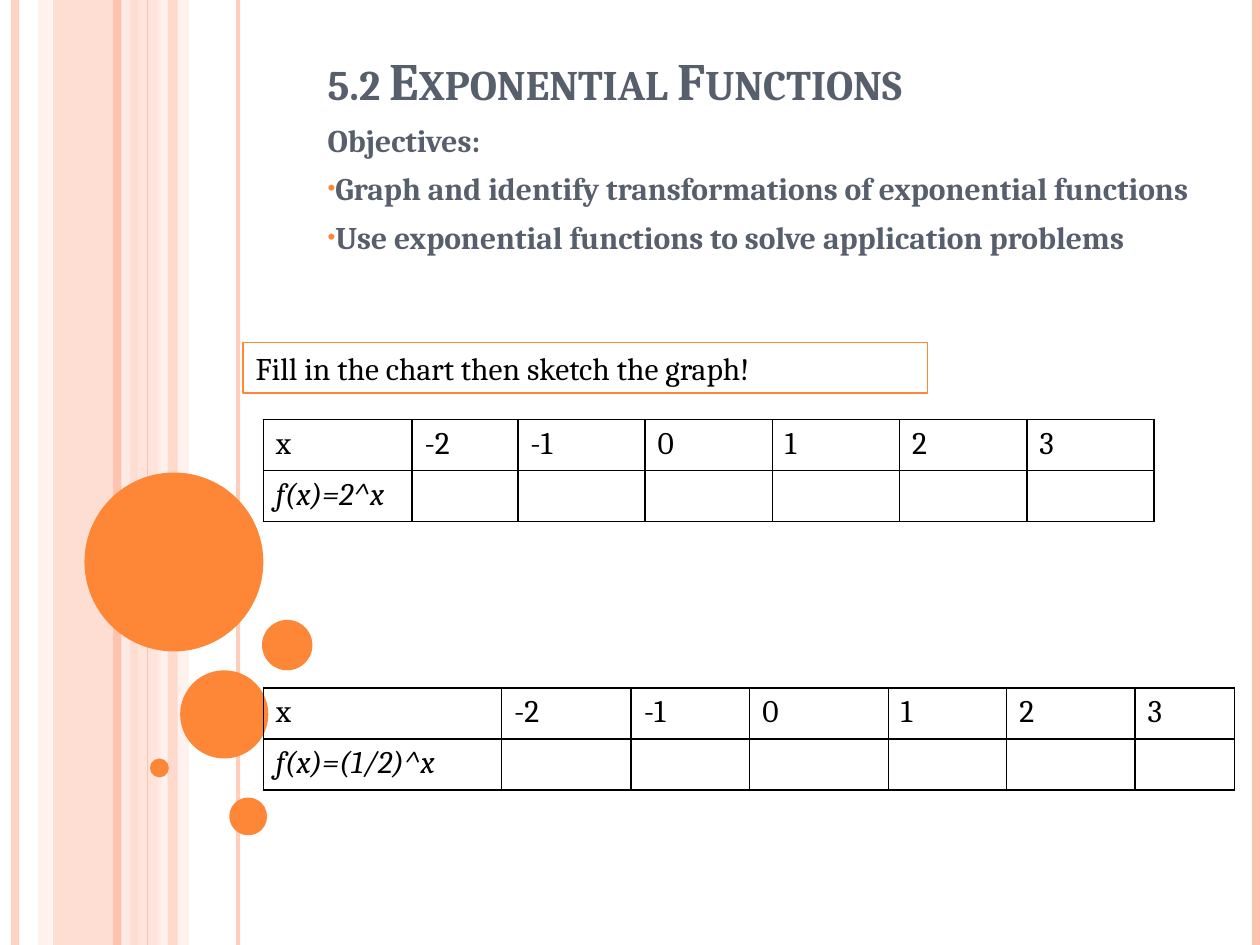
from lxml import etree
from pptx import Presentation
from pptx import util as u
from pptx.dml import color
from pptx.enum import shapes, text
from pptx.oxml import ns, parse_xml

COLUMNS, ROWS = 100, 75
UNIT = u.Inches(0.1)
ORANGE, SLATE, BLACK = "FE8637", "575F6D", "000000"
PEACH, BLUSH, PALE = "FEC3AE", "FFD9CE", "FFEDE8"
BODY = {"size": u.Pt(18), "name": "Cambria"}
HEADING = {**BODY, "bold": True}

BANDS = [(4.2, 6.7, PEACH, 54), (3, 1.1, BLUSH, 36), (10.8, 2, BLUSH, 70),
         (12.5, 2.5, PALE, 71), (13.3, 0.8, PEACH, 51)]
STRIPES = [(1.2, PEACH, 4.5, 73), (10, PALE, 4.5, 83), (9.3, PEACH, 4.5, 100),
           (18.9, PEACH, 2.25, 82), (11.7, PEACH, 0.75, 100), (99.7, PEACH, 4.5, 100)]
BUBBLES = [(6.7, 37.5, 14.2), (14.3, 53.2, 7), (11.9, 60.2, 1.5),
           (18.2, 63.3, 3), (20.8, 49.2, 4)]
OBJECTIVES = ["Graph and identify transformations of exponential functions",
              "Use exponential functions to solve application problems"]
X_VALUES = ["x", "-2", "-1", "0", "1", "2", "3"]
FUNCTION_TABLES = [
    (33.3, "f(x)=2^x", [11.8, 8.4] + [10.1] * 5),
    (54.6, "f(x)=(1/2)^x", [18.9, 10.3, 9.4, 11, 9.4, 10.2, 7.9]),
]


def grid(*lengths):
    """Turn grid units into slide lengths."""
    return [u.Emu(round(length * UNIT)) for length in lengths]


def rgb(code):
    """Read a hex string as a colour."""
    return color.RGBColor.from_string(code)


def xml(tag, body="", **attributes):
    """Make one drawing element."""
    values = "".join(f' {key}="{value}"' for key, value in attributes.items())
    return parse_xml(f'<a:{tag} {ns.nsdecls("a")}{values}>{body}</a:{tag}>')


def fade(part, opacity):
    """Give a solid colour its opacity in percent."""
    if opacity < 100:
        part.find(".//" + ns.qn("a:srgbClr")).append(xml("alpha", val=opacity * 1000))


def write(paragraph, words, looks, ink):
    """Write a left-aligned run with the given font values."""
    paragraph.alignment = text.PP_ALIGN.LEFT
    run = paragraph.add_run()
    run.text = words
    for key, value in looks.items():
        setattr(run.font, key, value)
    run.font.color.rgb = rgb(ink)
    return run


def add_filled(slide, kind, place, fill, opacity=100):
    """Draw a preset shape without outline or shadow."""
    figure = slide.shapes.add_shape(kind, *grid(*place))
    figure.shadow.inherit = False
    figure.fill.solid()
    figure.fill.fore_color.rgb = rgb(fill)
    fade(figure.fill._xPr, opacity)
    figure.line.fill.background()


def add_stripe(slide, column, ink, weight, opacity):
    """Draw a full-height vertical line."""
    stripe = slide.shapes.add_connector(
        shapes.MSO_CONNECTOR.STRAIGHT, *grid(column, 0, column, ROWS))
    stripe.line.width = u.Pt(weight)
    stripe.line.color.rgb = rgb(ink)
    properties = stripe._element.spPr
    fade(properties, opacity)
    etree.SubElement(properties, ns.qn("a:effectLst"))


def place_holder(holder, place, anchor):
    """Move a placeholder and return its emptied text frame."""
    holder.left, holder.top, holder.width, holder.height = grid(*place)
    frame = holder.text_frame
    frame.auto_size = text.MSO_AUTO_SIZE.NONE
    frame.word_wrap = True
    frame.vertical_anchor = anchor
    return frame


def add_title(slide):
    """Fill the title in small capitals."""
    frame = place_holder(slide.shapes.title, (25, 1.3, 67.5, 8), text.MSO_ANCHOR.BOTTOM)
    run = write(frame.paragraphs[0], "5.2 Exponential Functions",
                {**HEADING, "size": u.Pt(30)}, SLATE)
    run.font._element.set("cap", "small")


def add_objectives(slide):
    """Fill the subtitle with the bulleted objectives."""
    frame = place_holder(slide.placeholders[1], (25, 9.1, 70.7, 19.7), text.MSO_ANCHOR.TOP)
    write(frame.paragraphs[0], "Objectives:", HEADING, SLATE)
    for objective in OBJECTIVES:
        paragraph = frame.add_paragraph()
        properties = paragraph._p.get_or_add_pPr()
        properties.set("marL", "0")
        properties.set("indent", "0")
        properties.append(xml("buClr", f'<a:srgbClr val="{ORANGE}"/>'))
        properties.append(xml("buSzPct", val=70000))
        properties.append(xml("buChar", char="•"))
        paragraph.space_before = u.Pt(6)
        write(paragraph, objective, HEADING, SLATE)


def border(cell):
    """Rule all four sides of a cell and clear its fill."""
    properties = cell._tc.get_or_add_tcPr()
    ink = f'<a:solidFill><a:srgbClr val="{BLACK}"/></a:solidFill>'
    for side in ("lnL", "lnR", "lnT", "lnB"):
        properties.append(xml(side, ink, w=u.Pt(1)))
    cell.fill.background()


def add_function_table(slide, top, function, widths):
    """Add a table of x values with an empty row for the function."""
    height = 4.05
    table = slide.shapes.add_table(
        2, len(widths), *grid(20.9, top, sum(widths), 2 * height)).table
    table.first_row = table.horz_banding = False
    for column, width in zip(table.columns, grid(*widths)):
        column.width = width
    for row in table.rows:
        row.height = grid(height)[0]
    for cell in table.iter_cells():
        border(cell)
    for index, value in enumerate(X_VALUES):
        write(table.cell(0, index).text_frame.paragraphs[0], value, BODY, BLACK)
    write(table.cell(1, 0).text_frame.paragraphs[0], function,
          {**BODY, "italic": True}, BLACK)


def add_instruction(slide):
    """Add the outlined instruction above the tables."""
    box = slide.shapes.add_shape(
        shapes.MSO_SHAPE.RECTANGLE, *grid(19.3, 27.2, 54.3, 4))
    box.shadow.inherit = False
    box.fill.background()
    box.line.color.rgb = rgb(ORANGE)
    box.line.width = u.Pt(0.75)
    box.text_frame.word_wrap = True
    box.text_frame.vertical_anchor = text.MSO_ANCHOR.TOP
    write(box.text_frame.paragraphs[0], "Fill in the chart then sketch the graph!",
          BODY, BLACK)


def main():
    """Build and save the slide."""
    deck = Presentation()
    deck.slide_width, deck.slide_height = grid(COLUMNS, ROWS)
    slide = deck.slides.add_slide(deck.slide_layouts[0])
    *bands, front_band = BANDS
    for left, width, fill, opacity in bands:
        add_filled(slide, shapes.MSO_SHAPE.RECTANGLE, (left, 0, width, ROWS), fill, opacity)
    for stripe in STRIPES:
        add_stripe(slide, *stripe)
    left, width, fill, opacity = front_band
    add_filled(slide, shapes.MSO_SHAPE.RECTANGLE, (left, 0, width, ROWS), fill, opacity)
    for left, top, size in BUBBLES:
        add_filled(slide, shapes.MSO_SHAPE.OVAL, (left, top, size, size), ORANGE)
    add_title(slide)
    add_objectives(slide)
    for function_table in FUNCTION_TABLES:
        add_function_table(slide, *function_table)
    add_instruction(slide)
    deck.save("out.pptx")


if __name__ == "__main__":
    main()
